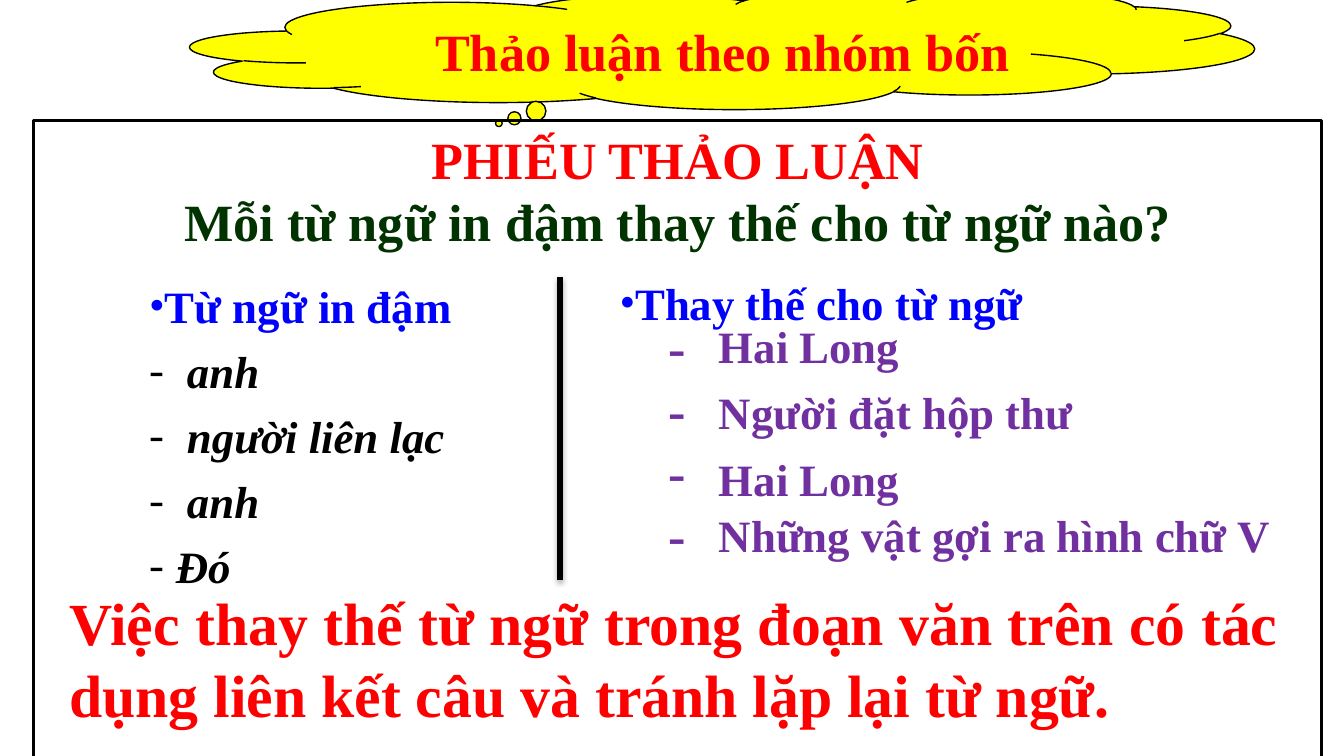
from lxml.etree import SubElement
from pptx import Presentation
from pptx.dml.color import RGBColor
from pptx.enum.shapes import MSO_CONNECTOR, MSO_SHAPE
from pptx.enum.text import MSO_ANCHOR, MSO_AUTO_SIZE, PP_ALIGN
from pptx.oxml.ns import qn
from pptx.util import Emu, Pt

EMU_PER_PX = 9525
FONT = "Times New Roman"
RED = RGBColor(0xFF, 0x00, 0x00)
BLUE = RGBColor(0x00, 0x00, 0xFF)
GREEN = RGBColor(0x00, 0x33, 0x00)
PURPLE = RGBColor(0x70, 0x30, 0xA0)
YELLOW = RGBColor(0xFF, 0xFF, 0x00)
BLACK = RGBColor(0x00, 0x00, 0x00)

HEADING = "Thảo luận theo nhóm bốn"
BOLD_WORDS = ["anh", "người liên lạc", "anh", "Đó"]
ANSWERS = [
    ("Hai Long", 223),
    ("Người đặt hộp thư", 270),
    ("Hai Long", 318),
    ("Những vật gợi ra hình chữ V", 358),
]
CONCLUSION = (
    "Việc thay thế từ ngữ trong đoạn văn trên có tác dụng "
    "liên kết câu và tránh lặp lại từ ngữ."
)


def px(value):
    return Emu(value * EMU_PER_PX)


def place(shape, left, top, width, height):
    shape.left, shape.top = px(left), px(top)
    shape.width, shape.height = px(width), px(height)


def prepare_frame(shape, anchor=MSO_ANCHOR.TOP):
    frame = shape.text_frame
    frame.word_wrap = True
    frame.auto_size = MSO_AUTO_SIZE.NONE
    frame.vertical_anchor = anchor
    return frame


def write(frame, text, size, color, align=PP_ALIGN.LEFT, before=0, italic=False):
    first = frame.paragraphs[0]
    paragraph = frame.add_paragraph() if first.runs else first
    paragraph.alignment = align
    paragraph.space_before = Pt(before)
    run = paragraph.add_run()
    run.text = text
    font = run.font
    font.name, font.size = FONT, Pt(size)
    font.bold, font.italic = True, italic
    font.color.rgb = color
    return paragraph


def set_bullet(paragraph, character, indent=0):
    properties = paragraph._p.get_or_add_pPr()
    properties.set("marL", str(px(indent)))
    properties.set("indent", str(-px(indent)))
    SubElement(properties, qn("a:buFont"), typeface=FONT)
    SubElement(properties, qn("a:buChar"), char=character)


def add_box(slide, preset, bounds, line_width, fill=None):
    shape = slide.shapes.add_shape(preset, *map(px, bounds))
    shape.shadow.inherit = False
    if fill is None:
        shape.fill.background()
    else:
        shape.fill.solid()
        shape.fill.fore_color.rgb = fill
    shape.line.color.rgb = BLACK
    shape.line.width = Pt(line_width)
    return shape


def add_text(slide, bounds, text, size, color, align=PP_ALIGN.LEFT, before=0):
    box = slide.shapes.add_textbox(*map(px, bounds))
    write(prepare_frame(box), text, size, color, align, before)


def add_title(slide):
    bounds = (136, -6, 760, 84)
    cloud = add_box(slide, MSO_SHAPE.CLOUD_CALLOUT, bounds, 0.75, YELLOW)
    cloud.adjustments[0] = -0.21
    cloud.adjustments[1] = 0.62
    slide.shapes._spTree.insert(2, cloud._element)
    title = slide.shapes.title
    place(title, *bounds)
    frame = prepare_frame(title, MSO_ANCHOR.MIDDLE)
    write(frame, HEADING, 28, RED, PP_ALIGN.CENTER)


def add_panel(slide):
    panel = add_box(slide, MSO_SHAPE.RECTANGLE, (24, 86, 920, 507), 1.5)
    frame = prepare_frame(panel)
    center = PP_ALIGN.CENTER
    write(frame, "PHIẾU THẢO LUẬN", 28, RED, center)
    write(frame, "Mỗi từ ngữ in đậm thay thế cho từ ngữ nào?", 28, GREEN, center)
    for index in range(len(ANSWERS)):
        write(frame, "-", 28, PURPLE, center, before=0 if index else 33)


def fill_lists(slide):
    words, replacements = slide.placeholders[1], slide.placeholders[2]
    place(words, 97, 194, 296, 293)
    place(replacements, 433, 192, 360, 48)
    words_frame = prepare_frame(words)
    headings = [
        (words_frame, "Từ ngữ in đậm"),
        (prepare_frame(replacements), "Thay thế cho từ ngữ"),
    ]
    for frame, text in headings:
        set_bullet(write(frame, text, 24, BLUE, before=6), "•")
    for word in BOLD_WORDS:
        indent = 19 if word == BOLD_WORDS[-1] else 27
        paragraph = write(words_frame, word, 24, BLACK, before=6, italic=True)
        set_bullet(paragraph, "-", indent)


def add_divider(slide):
    ends = map(px, (400, 198, 400, 414))
    line = slide.shapes.add_connector(MSO_CONNECTOR.STRAIGHT, *ends)
    line.line.color.rgb = BLACK
    line.line.width = Pt(3)
    effects = SubElement(line._element.spPr, qn("a:effectLst"))
    shadow = SubElement(
        effects, qn("a:outerShdw"), blurRad="39370", dist="22860", dir="5400000"
    )
    color = SubElement(shadow, qn("a:srgbClr"), val="000000")
    SubElement(color, qn("a:alpha"), val="35000")


def main():
    presentation = Presentation()
    presentation.slide_width, presentation.slide_height = px(960), px(540)
    slide = presentation.slides.add_slide(presentation.slide_layouts[3])
    add_title(slide)
    add_panel(slide)
    fill_lists(slide)
    for text, top in ANSWERS:
        add_text(slide, (504, top, 420, 48), text, 24, PURPLE, before=6)
    add_divider(slide)
    bounds = (40, 414, 883, 113)
    add_text(slide, bounds, CONCLUSION, 32, RED, PP_ALIGN.JUSTIFY, before=16)
    presentation.save("out.pptx")


if __name__ == "__main__":
    main()
